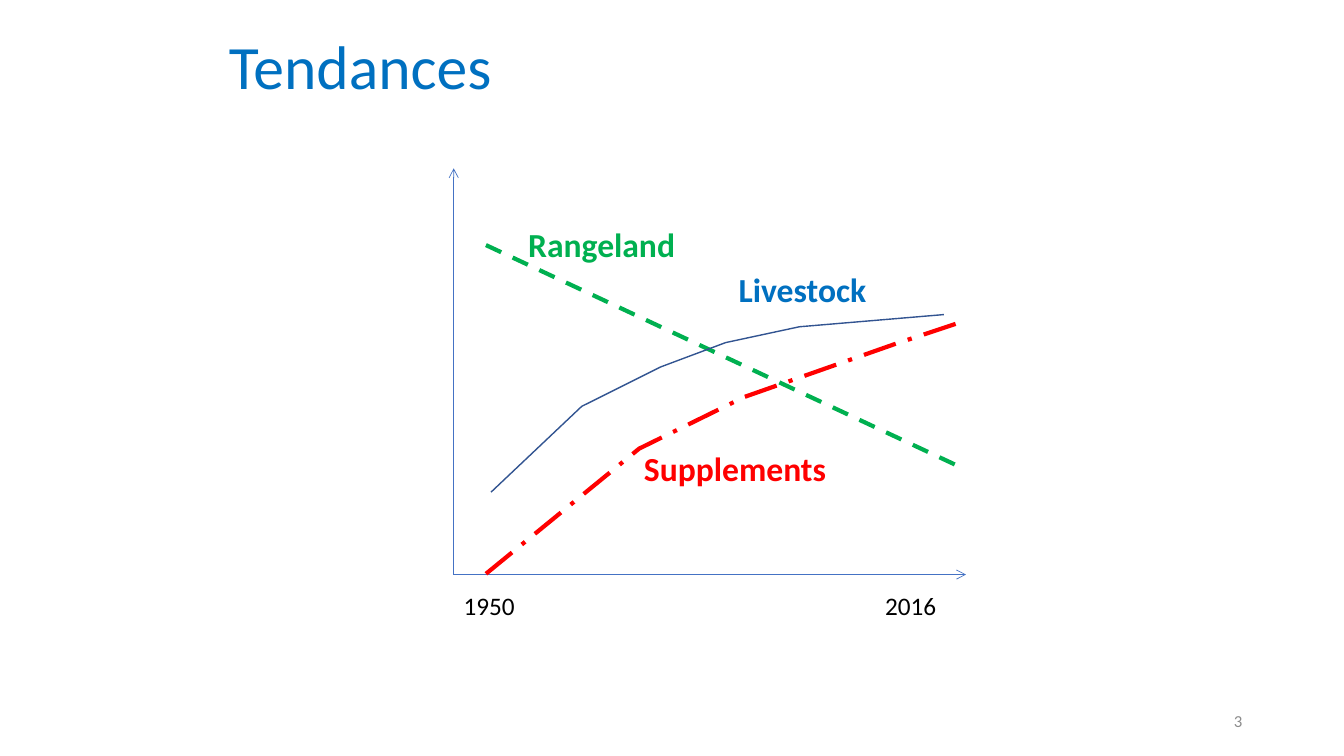
from dataclasses import dataclass

from lxml import etree
from pptx import Presentation
from pptx.dml.color import RGBColor
from pptx.enum.dml import MSO_LINE
from pptx.enum.shapes import MSO_CONNECTOR
from pptx.enum.text import MSO_ANCHOR, PP_ALIGN
from pptx.oxml.ns import qn
from pptx.util import Inches, Pt

LEFT, RIGHT = PP_ALIGN.LEFT, PP_ALIGN.RIGHT
TOP, MIDDLE = MSO_ANCHOR.TOP, MSO_ANCHOR.MIDDLE
STRAIGHT = MSO_CONNECTOR.STRAIGHT
DASH, LONG_DASH_DOT = MSO_LINE.DASH, MSO_LINE.LONG_DASH_DOT


@dataclass(frozen=True)
class Theme:
    font: str = "Calibri"
    blue: str = "0070C0"
    green: str = "00B050"
    red: str = "FF0000"
    black: str = "000000"
    grey: str = "8C8C8C"
    axis: str = "4472C4"
    curve: str = "325491"
    title: int = 44
    label: int = 24
    year: int = 18
    number: int = 12


@dataclass(frozen=True)
class Box:
    """An area in inches, divided into 100 columns and 100 rows."""
    x: float
    y: float
    w: float
    h: float

    def point(self, col, row):
        return (Inches(self.x + self.w * col / 100),
                Inches(self.y + self.h * row / 100))

    def area(self, col, row, cols, rows):
        return (*self.point(col, row),
                Inches(self.w * cols / 100), Inches(self.h * rows / 100))


THEME = Theme()
PAGE = Box(0, 0, 13.33, 7.5)
TITLE = Box(2.17, 0.3, 9, 0.78)
NUMBER = Box(9.42, 6.95, 3, 0.4)
PLOT = Box(4.5, 1.67, 5.08, 4.03)

# Points and label areas in columns and rows of the plot
RANGELAND = [(6.3, 18.9), (98, 73)]
SUPPLEMENTS = [(6.3, 99.8), (36.2, 69), (56.7, 56.3), (85.8, 43.4), (99.4, 37.7)]
LIVESTOCK = [(7.3, 79.7), (25, 58.6), (40.4, 48.9), (53.1, 42.9), (67.5, 39),
             (95.7, 36)]
LABELS = [
    ("Rangeland", (12.6, 12.4, 32.9, 12.4), THEME.green),
    ("Livestock", (53.7, 23.6, 29.1, 12.4), THEME.blue),
    ("Supplements", (35.2, 67.5, 40, 12.4), THEME.red),
]
YEARS = [("1950", 0), ("2016", 82.3)]


def write(sp, text, size, color, bold=False, align=LEFT, anchor=TOP,
          wrap=True, spacing=None):
    tf = sp.text_frame
    tf.word_wrap = wrap
    tf.vertical_anchor = anchor
    p = tf.paragraphs[0]
    p.alignment = align
    p.line_spacing = spacing
    r = p.add_run()
    r.text = text
    r.font.name = THEME.font
    r.font.size = Pt(size)
    r.font.bold = bold
    r.font.color.rgb = RGBColor.from_string(color)


def style_line(sp, color, width, dash=None):
    sp.line.color.rgb = RGBColor.from_string(color)
    sp.line.width = Pt(width)
    if dash:
        sp.line.dash_style = dash


def add_straight(shapes, start, end, color, width, dash=None, arrow=False):
    sp = shapes.add_connector(STRAIGHT, *start, *end)
    style_line(sp, color, width, dash)
    if arrow:
        etree.SubElement(sp.line._get_or_add_ln(), qn("a:tailEnd"), type="arrow")
    etree.SubElement(sp._element.spPr, qn("a:effectLst"))


def add_curve(shapes, points, color, width, dash=None):
    builder = shapes.build_freeform(*points[0])
    builder.add_line_segments(points[1:], close=False)
    sp = builder.convert_to_shape()
    sp.shadow.inherit = False
    sp.fill.background()
    style_line(sp, color, width, dash)


def add_title(s, box):
    sp = s.shapes.title
    sp.left, sp.top, sp.width, sp.height = box.area(0, 0, 100, 100)
    write(sp, "Tendances", THEME.title, THEME.blue, anchor=MIDDLE, spacing=0.9)


def add_number(s, box):
    sp = s.shapes.add_textbox(*box.area(0, 0, 100, 100))
    write(sp, "3", THEME.number, THEME.grey, align=RIGHT, anchor=MIDDLE)


def add_trends(s, box):
    shapes = s.shapes.add_group_shape().shapes

    # Axes
    for end in [(0, 0), (100, 100)]:
        add_straight(shapes, box.point(0, 100), box.point(*end),
                     THEME.axis, 0.5, arrow=True)

    # Trend lines
    rangeland, supplements, livestock = (
        [box.point(*pt) for pt in trend]
        for trend in (RANGELAND, SUPPLEMENTS, LIVESTOCK))
    add_straight(shapes, *rangeland, THEME.green, 3, DASH)
    add_curve(shapes, supplements, THEME.red, 3, LONG_DASH_DOT)
    add_curve(shapes, livestock, THEME.curve, 1)

    # Trend names and years
    for text, area, color in LABELS:
        sp = shapes.add_textbox(*box.area(*area))
        write(sp, text, THEME.label, color, bold=True, wrap=False)
    for text, col in YEARS:
        sp = shapes.add_textbox(*box.area(col, 102.7, 14, 9.9))
        write(sp, text, THEME.year, THEME.black, wrap=False)


def main():
    prs = Presentation()
    prs.slide_width, prs.slide_height = Inches(PAGE.w), Inches(PAGE.h)
    s = prs.slides.add_slide(prs.slide_layouts.get_by_name("Title Only"))
    add_title(s, TITLE)
    add_number(s, NUMBER)
    add_trends(s, PLOT)
    prs.save("out.pptx")


if __name__ == "__main__":
    main()
